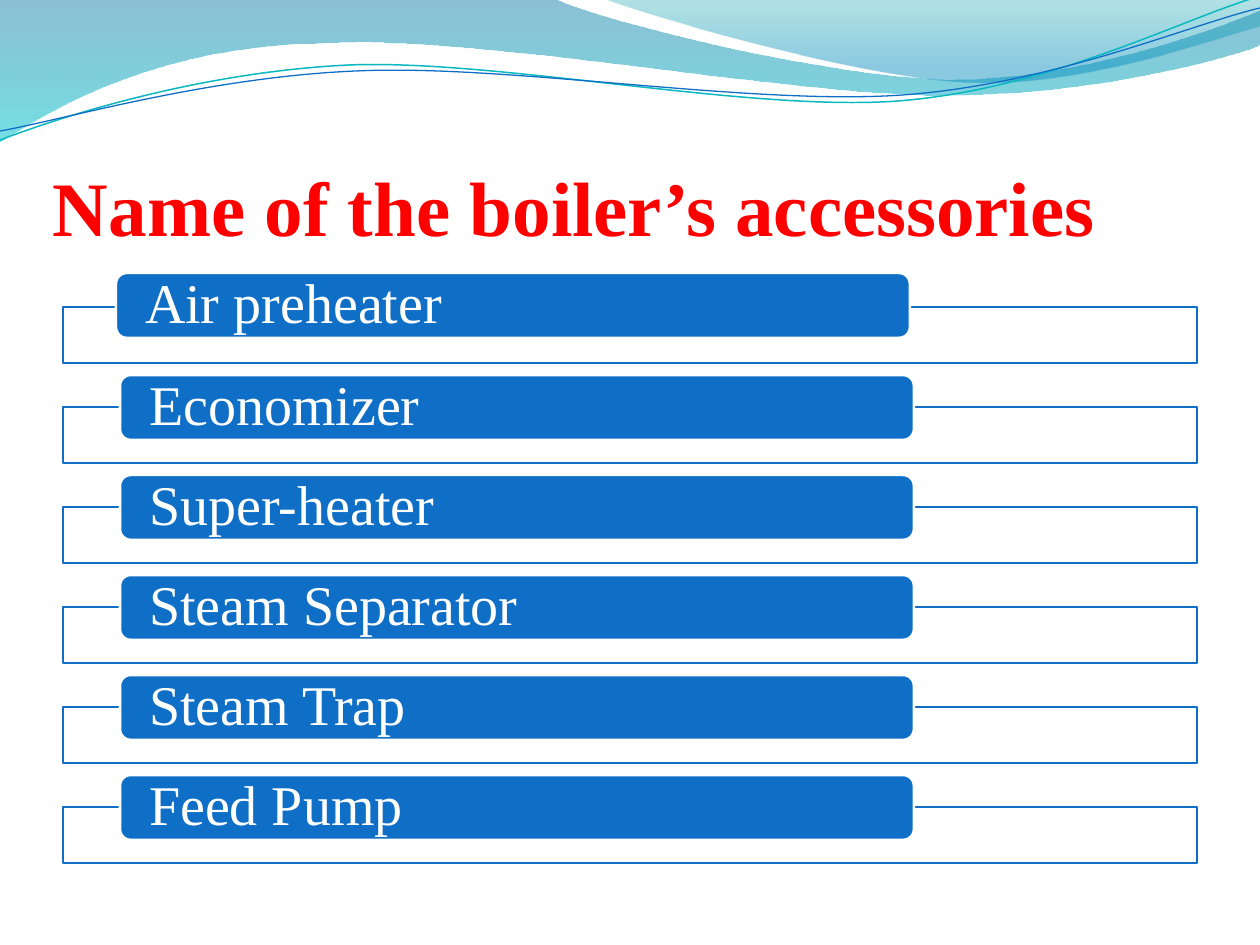
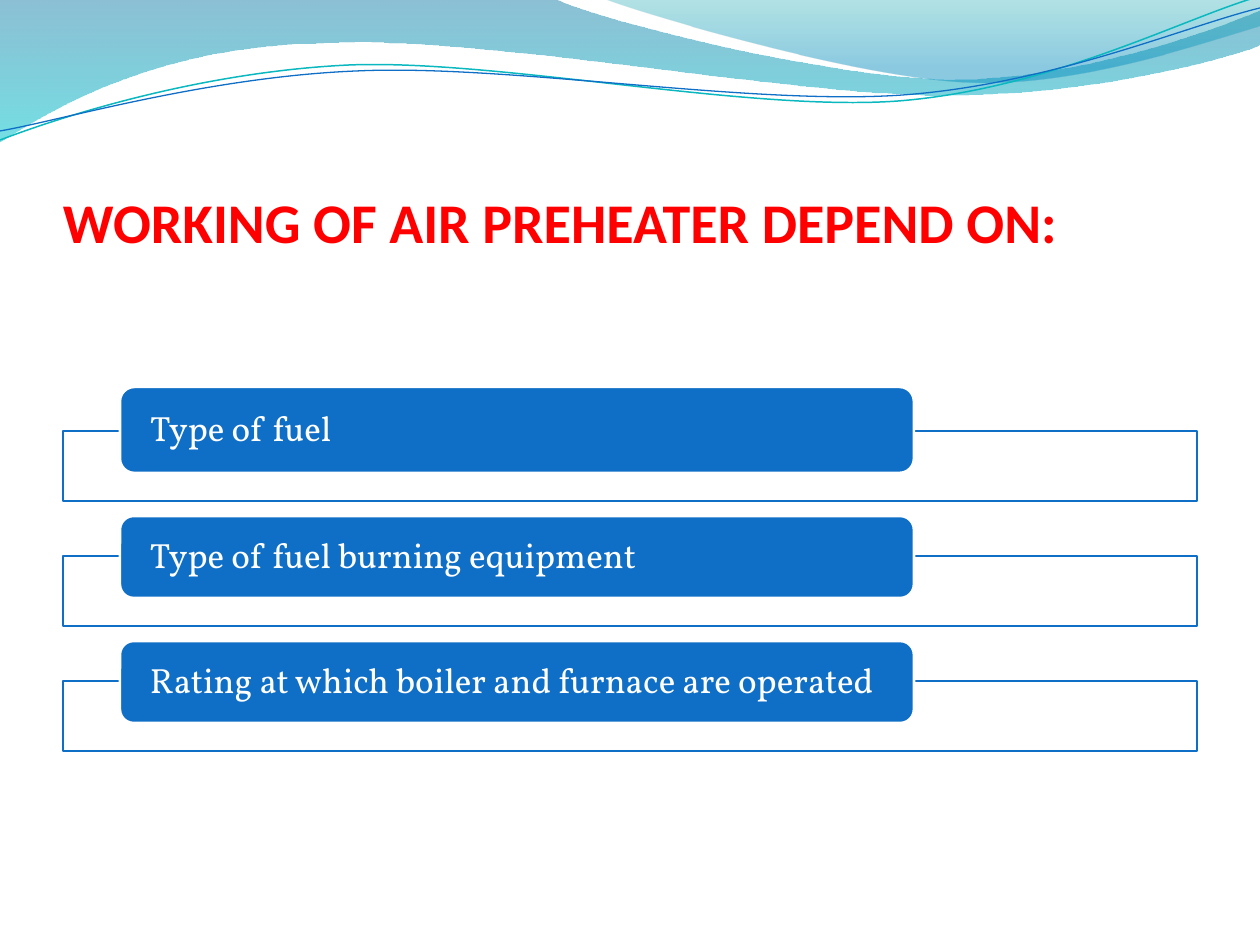
from lxml import etree
from pptx import Presentation
from pptx.dml.color import RGBColor
from pptx.enum.shapes import MSO_SHAPE
from pptx.enum.text import MSO_ANCHOR, PP_ALIGN
from pptx.oxml.ns import qn
from pptx.util import Pt

RECTANGLE = MSO_SHAPE.RECTANGLE
ROUNDED = MSO_SHAPE.ROUNDED_RECTANGLE
MIDDLE, BOTTOM = MSO_ANCHOR.MIDDLE, MSO_ANCHOR.BOTTOM
LEFT = PP_ALIGN.LEFT

EMU_PER_PX = 914400 / 126
PAGE_WIDTH, PAGE_HEIGHT = 1260, 945
BLUE, TEAL, RED, WHITE = "0F6FC6", "0AB8BF", "FF0000", "FFFFFF"
SERIF, SANS, BODY = "Times New Roman", "Calibri", "Vollkorn"

# A two-number entry is a corner; a six-number entry is a cubic curve.
WAVE_BANDS = [
    ([(0, 0), (555, -1), (600, 21, 837, 79, 955, 79),
      (1075, 79, 1207, 33, 1260, 11), (1261, 45),
      (1239, 55, 1096, 96, 940, 95), (784, 95, 481, 35, 324, 43),
      (163, 45, 58, 105, -1, 142)],
     [(0, "0074A1", 45), (1, "00C6CF", 55)]),
    ([(604, -1), (641, 14, 859, 78, 969, 82),
      (1079, 87, 1211, 40, 1260, 26), (1260, 0)],
     [(0, "00A1A9", 30), (0.8, "008BBF", 45)]),
]
WAVE_LINES = [
    ([(0, 140), (60, 117, 199, 72, 349, 65), (498, 59, 747, 112, 898, 101),
      (1050, 89, 1182, 19, 1257, -3)], TEAL, 0.85),
    ([(0, 131), (59, 121, 207, 77, 357, 71), (508, 64, 752, 106, 903, 95),
      (1053, 84, 1186, 26, 1260, 8)], BLUE, 0.75),
]


def px(length):
    """Turn pixels into EMU."""
    return round(length * EMU_PER_PX)


def color(hex_value):
    """Turn a hex string into a colour."""
    return RGBColor.from_string(hex_value)


def set_opacity(shape, percents):
    """Set the opacity of the fill colours of a shape, in order."""
    fills = shape.fill._xPr.iter(qn("a:srgbClr"))
    for element, percent in zip(fills, percents):
        etree.SubElement(element, qn("a:alpha"), val=str(percent * 1000))


def bend(shape, outline):
    """Turn the straight segments of a freeform into its cubic curves."""
    segments = list(shape._element.iter(qn("a:lnTo")))
    for segment, step in zip(segments, outline[1:]):
        if len(step) == 2:
            continue
        curve = etree.Element(qn("a:cubicBezTo"))
        for x, y in zip(step[::2], step[1::2]):
            etree.SubElement(curve, qn("a:pt"), x=str(px(x) - shape.left),
                             y=str(px(y) - shape.top))
        segment.getparent().replace(segment, curve)


def add_outline(page, outline, closed):
    """Draw a freeform along an outline."""
    points = [tuple(map(px, step[-2:])) for step in outline]
    builder = page.shapes.build_freeform(*points[0], scale=1.0)
    builder.add_line_segments(points[1:], close=closed)
    shape = builder.convert_to_shape()
    shape.shadow.inherit = False
    bend(shape, outline)
    return shape


def add_waves(page):
    """Draw the wave bands and lines across the top of a page."""
    for outline, stops in WAVE_BANDS:
        band = add_outline(page, outline, True)
        band.line.fill.background()
        band.fill.gradient()
        band.fill.gradient_angle = 270
        for stop, (position, hex_value, _) in zip(band.fill.gradient_stops, stops):
            stop.position = position
            stop.color.rgb = color(hex_value)
        set_opacity(band, [percent for _, _, percent in stops])
    for outline, hex_value, weight in WAVE_LINES:
        wave = add_outline(page, outline, False)
        wave.fill.background()
        wave.line.color.rgb = color(hex_value)
        wave.line.width = Pt(weight)


def add_block(page, kind, box, fill, line):
    """Draw a filled and outlined preset shape."""
    shape = page.shapes.add_shape(kind, *map(px, box))
    shape.shadow.inherit = False
    shape.fill.solid()
    shape.fill.fore_color.rgb = color(fill)
    shape.line.color.rgb = color(line)
    shape.line.width = Pt(1.5)
    return shape


def write(shape, text, font, size, hex_value, anchor, insets, bold=False):
    """Write one left-aligned paragraph into a shape and return it."""
    frame = shape.text_frame
    frame.word_wrap = True
    frame.vertical_anchor = anchor
    (frame.margin_left, frame.margin_top,
     frame.margin_right, frame.margin_bottom) = map(px, insets)
    para = frame.paragraphs[0]
    para.alignment = LEFT
    span = para.add_run()
    span.text = text
    span.font.name = font
    span.font.size = Pt(size)
    span.font.bold = bold
    span.font.color.rgb = color(hex_value)
    return para


def add_title(page, box, text, font, size):
    """Write the red title at the bottom of its box."""
    title = page.shapes.add_textbox(*map(px, box))
    write(title, text, font, size, RED, BOTTOM, (0, 6, 0, 0), bold=True)


def add_tab_list(page, box, labels, pitch, rise, tab_height, first_tab, font, size):
    """Draw framed rows at a fixed pitch, each with a label tab over its top edge."""
    left, top, width, height = box
    for index, label in enumerate(labels):
        row_top = top + index * pitch
        frame = add_block(page, RECTANGLE, (left, row_top, width, height), WHITE, BLUE)
        set_opacity(frame, [90])
        tab_box = (left + 57, row_top - rise, 794, tab_height)
        if index == 0:
            tab_box = first_tab
        tab = add_block(page, ROUNDED, tab_box, BLUE, WHITE)
        para = write(tab, label, font, size, WHITE, MIDDLE, (26, 0, 26, 0))
        para.line_spacing = 0.9


def add_page(deck):
    """Add a blank page with the waves."""
    page = deck.slides.add_slide(deck.slide_layouts[6])
    add_waves(page)
    return page


def add_accessories_page(deck):
    """Build the page that names the boiler accessories."""
    page = add_page(deck)
    add_title(page, (53, 95, 1134, 157), "Name of the boiler’s accessories", SERIF, 44)
    labels = ["Air preheater", "Economizer", "Super-heater",
              "Steam Separator", "Steam Trap", "Feed Pump"]
    add_tab_list(page, (63, 307, 1134, 56), labels, pitch=100, rise=32, tab_height=65,
                 first_tab=(116, 273, 794, 65), font=SERIF, size=32)


def add_preheater_page(deck):
    """Build the page on what the air preheater depends on."""
    page = add_page(deck)
    add_title(page, (63, 98, 1134, 157), "WORKING OF AIR PREHEATER DEPEND ON:", SANS, 32)
    labels = ["Type of fuel", "Type of fuel burning equipment",
              "Rating at which boiler and furnace are operated"]
    add_tab_list(page, (63, 431, 1134, 70), labels, pitch=125, rise=40, tab_height=82,
                 first_tab=(120, 387, 794, 86), font=BODY, size=20)


def main():
    """Build and save the deck."""
    deck = Presentation()
    deck.slide_width, deck.slide_height = px(PAGE_WIDTH), px(PAGE_HEIGHT)
    add_accessories_page(deck)
    add_preheater_page(deck)
    deck.save("out.pptx")


if __name__ == "__main__":
    main()
